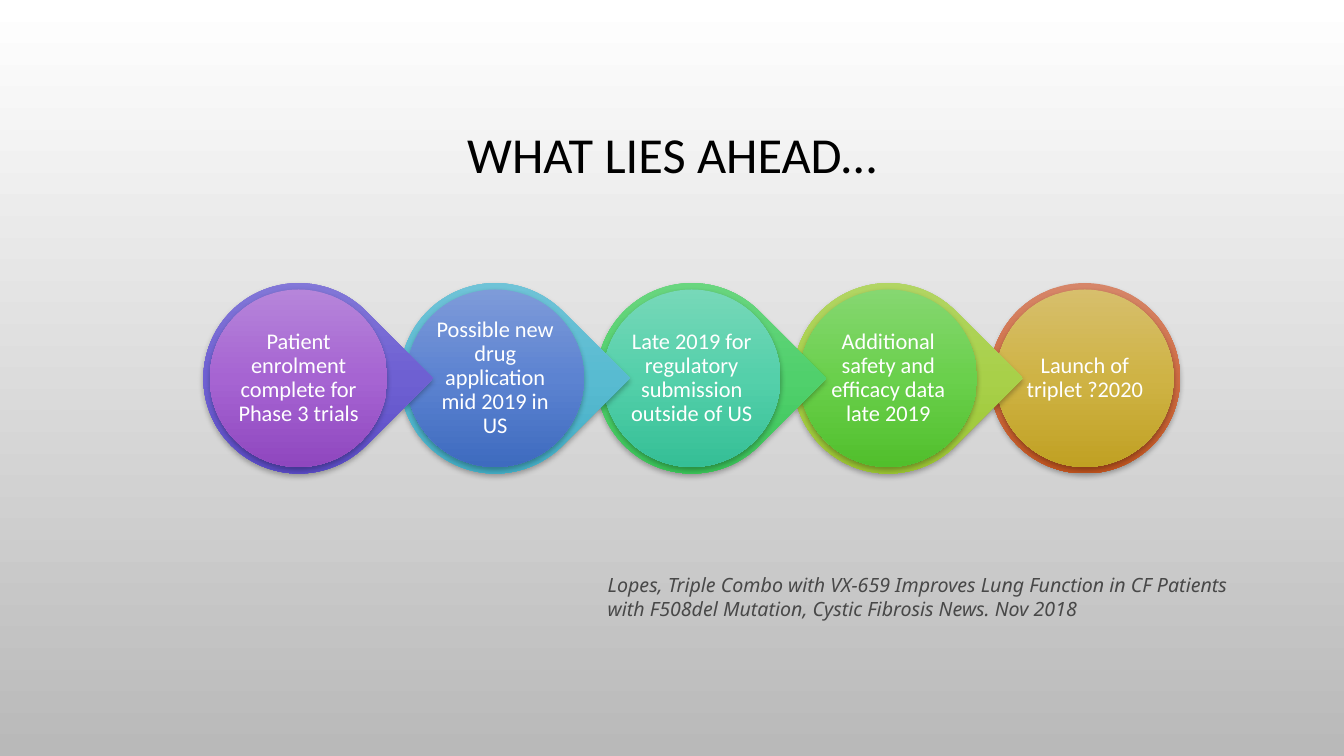
from copy import deepcopy

from lxml.etree import SubElement
from pptx import Presentation
from pptx.dml.color import RGBColor
from pptx.enum.shapes import MSO_SHAPE as Shape
from pptx.enum.text import MSO_ANCHOR as Anchor, MSO_AUTO_SIZE as AutoSize, PP_ALIGN as Align
from pptx.oxml.ns import qn
from pptx.util import Pt

COLORS = {
    "title": "000000",
    "label": "FFFFFF",
    "citation": "484848",
    "shadow": "000000",
    "background": ("FFFFFF", "B9B9B9"),
    "violet": ("8B81DA", "6E60D2", "5242BF"),
    "purple": ("B685DA", "A664D2", "8F47BF"),
    "cyan": ("7AC6D9", "58BBD1", "3AA7BF"),
    "blue": ("7E9BD9", "5C83D1", "3E6BBF"),
    "green": ("74D887", "50D06C", "31BF51"),
    "teal": ("77D8B9", "54D0AA", "35BF96"),
    "lime": ("B6D76E", "A8D049", "95C028"),
    "leaf": ("86D771", "6AD04C", "51BF2C"),
    "rust": ("D68669", "CF6C42", "C0541F"),
    "gold": ("D7BF6C", "CFB345", "C0A123"),
}

MILESTONES = [
    ("Patient enrolment complete for Phase 3 trials", "violet", "purple"),
    ("Possible new drug application mid 2019 in US", "cyan", "blue"),
    ("Late 2019 for regulatory submission outside of US", "green", "teal"),
    ("Additional safety and efficacy data late 2019", "lime", "leaf"),
    ("Launch of triplet ?2020", "rust", "gold"),
]

FIRST_CENTER, CENTER_Y, PITCH = 213.3, 270.2, 140.4
RING, DISC, LABEL = 136, 126.8, 90.8


class TimelineSlide:
    body_font = "Calibri"
    citation_font = "Noto Sans"

    def __init__(self, deck):
        self.slide = deck.slides.add_slide(deck.slide_layouts[5])

    def gradient(self, fill, owner, color):
        fill.gradient()
        fill.gradient_angle = 270
        owner.find(".//" + qn("a:gradFill")).set("rotWithShape", "0")
        stop_list = owner.find(".//" + qn("a:gsLst"))
        shades = COLORS[color]
        while len(stop_list) < len(shades):
            stop_list.append(deepcopy(stop_list[-1]))
        for index, (stop, shade) in enumerate(zip(fill.gradient_stops, shades)):
            stop.position = index / (len(shades) - 1)
            stop.color.rgb = RGBColor.from_string(shade)

    def background(self):
        background = self.slide.background
        self.gradient(background.fill, self.slide.element, "background")

    def add_text(self, frame, text, size, color, font, align, spacing=None, italic=False):
        frame.word_wrap = True
        paragraph = frame.paragraphs[0]
        paragraph.alignment = align
        paragraph.line_spacing = spacing
        run = paragraph.add_run()
        run.text = text
        run.font.size = Pt(size)
        run.font.name = font
        run.font.italic = italic
        run.font.color.rgb = RGBColor.from_string(COLORS[color])

    def title(self, text, left, top, width, height):
        title = self.slide.shapes.title
        title.left, title.top = Pt(left), Pt(top)
        title.width, title.height = Pt(width), Pt(height)
        title.text_frame.vertical_anchor = Anchor.MIDDLE
        self.add_text(title.text_frame, text, 36, "title", self.body_font, Align.CENTER, 0.9)

    def shadow(self, shape):
        shape.shadow.inherit = False
        effects = shape.element.spPr.find(qn("a:effectLst"))
        outer = SubElement(effects, qn("a:outerShdw"), blurRad=str(Pt(4)), dist=str(Pt(2)),
                           dir="5400000", algn="ctr", rotWithShape="0")
        shade = SubElement(outer, qn("a:srgbClr"), val=COLORS["shadow"])
        SubElement(shade, qn("a:alpha"), val="28000")

    def badge(self, kind, center_x, size, color):
        badge = self.slide.shapes.add_shape(
            kind, Pt(center_x - size / 2), Pt(CENTER_Y - size / 2), Pt(size), Pt(size))
        self.gradient(badge.fill, badge.element.spPr, color)
        badge.line.fill.background()
        self.shadow(badge)
        return badge

    def label(self, text, center_x):
        label = self.slide.shapes.add_textbox(
            Pt(center_x - LABEL / 2), Pt(CENTER_Y - LABEL / 2), Pt(LABEL), Pt(LABEL))
        frame = label.text_frame
        frame.margin_left = frame.margin_right = Pt(1.5)
        frame.margin_top = frame.margin_bottom = Pt(1.5)
        frame.vertical_anchor = Anchor.MIDDLE
        self.add_text(frame, text, 16, "label", self.body_font, Align.CENTER, 0.9)

    def milestone(self, text, center_x, ring_color, disc_color, is_last):
        if is_last:
            self.badge(Shape.OVAL, center_x, RING, ring_color)
        else:
            pointer = self.badge(Shape.TEAR, center_x, RING, ring_color)
            pointer.adjustments[0] = 1
            pointer.rotation = 45
        self.badge(Shape.OVAL, center_x, DISC, disc_color)
        self.label(text, center_x)

    def citation(self, text, left, top, width, height):
        citation = self.slide.shapes.add_textbox(Pt(left), Pt(top), Pt(width), Pt(height))
        citation.text_frame.auto_size = AutoSize.SHAPE_TO_FIT_TEXT
        self.add_text(citation.text_frame, text, 14, "citation", self.citation_font,
                      Align.LEFT, italic=True)


def main():
    deck = Presentation()
    deck.slide_width, deck.slide_height = Pt(960), Pt(540)
    timeline = TimelineSlide(deck)
    timeline.background()
    timeline.title("WHAT LIES AHEAD…", 72, 49, 816, 126)
    last = len(MILESTONES) - 1
    for index, (text, ring_color, disc_color) in reversed(list(enumerate(MILESTONES))):
        timeline.milestone(text, FIRST_CENTER + index * PITCH, ring_color, disc_color, index == last)
    timeline.citation(
        "Lopes, Triple Combo with VX-659 Improves Lung Function in CF Patients "
        "with F508del Mutation, Cystic Fibrosis News. Nov 2018", 427, 406, 485, 41)
    deck.save("out.pptx")


if __name__ == "__main__":
    main()
